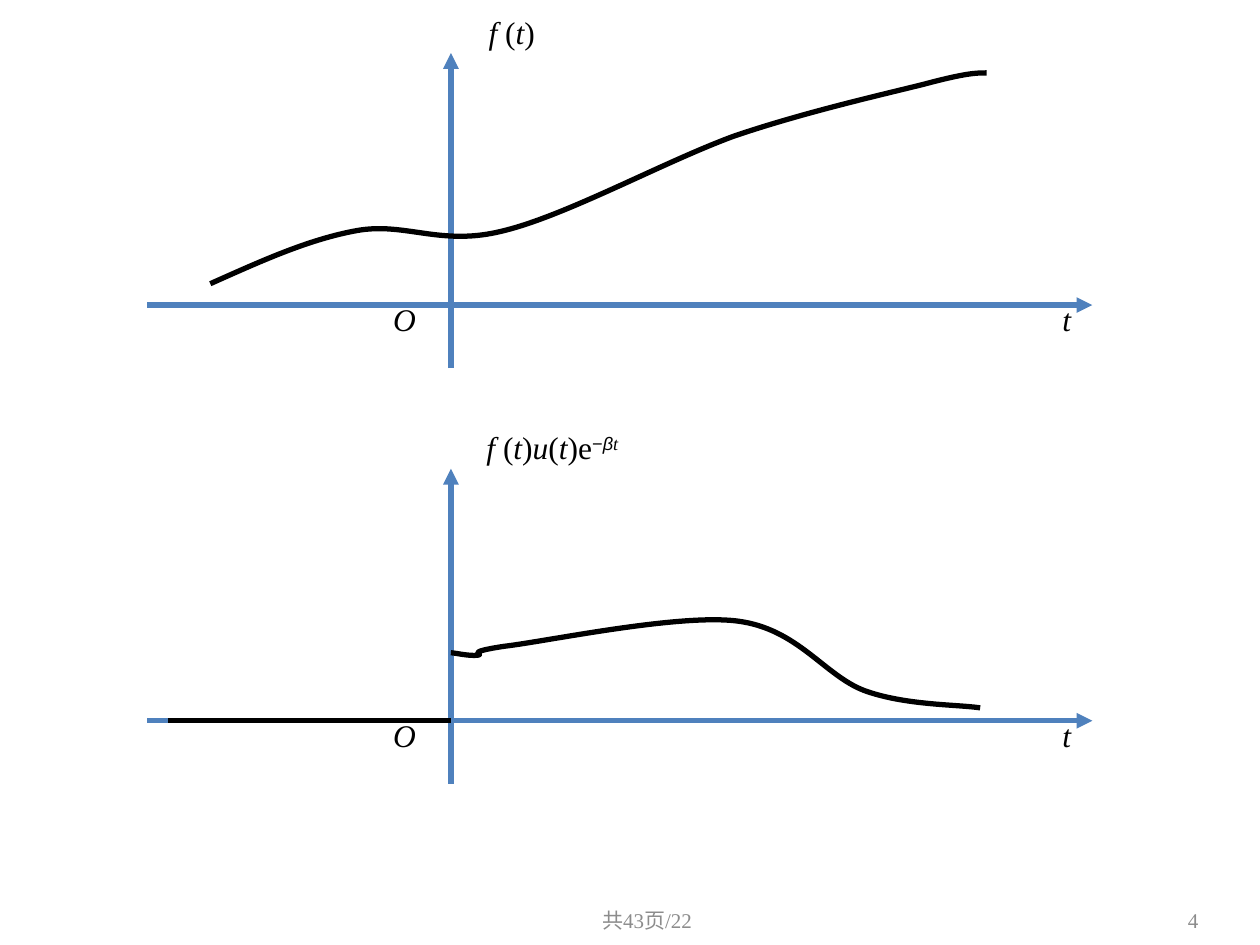
from lxml.etree import SubElement
from pptx import Presentation
from pptx.dml.color import RGBColor
from pptx.enum.shapes import MSO_CONNECTOR
from pptx.enum.text import MSO_ANCHOR, MSO_AUTO_SIZE, PP_ALIGN
from pptx.oxml.ns import qn
from pptx.util import Cm, Pt

BLUE, BLACK, GRAY = "4F81BD", "000000", "8C8C8C"
SERIF, SANS = "Times New Roman", "Arial"

# Runs: text, italic, superscript, font
F_OF_T = [("f ", True, False, SERIF), ("(", False, False, SERIF),
          ("t", True, False, SERIF), (")", False, False, SERIF)]
DAMPED = F_OF_T + [("u", True, False, SERIF), ("(", False, False, SERIF),
                   ("t", True, False, SERIF), (")e", False, False, SERIF),
                   ("−", False, True, SANS), ("β", True, True, SANS),
                   ("t", True, True, SERIF)]

# Curves in cm: a start point, then two controls and an end per segment
SIGNAL = [(4.24, 5.72),
          (5.23, 5.28), (6.2, 4.83), (7.19, 4.65),
          (8.18, 4.47), (8.89, 4.98), (10.16, 4.65),
          (11.43, 4.34), (13.41, 3.25), (14.81, 2.74),
          (16.23, 2.26), (17.78, 1.91), (18.62, 1.7),
          (19.48, 1.47), (19.69, 1.47), (19.89, 1.47)]
DECAY = [(9.09, 13.16),
         (9.17, 13.16), (9.45, 13.23), (9.63, 13.21),
         (9.8, 13.18), (9.3, 13.16), (10.16, 13.03),
         (11.02, 12.93), (13.67, 12.37), (14.86, 12.52),
         (16.08, 12.67), (16.61, 13.61), (17.42, 13.92),
         (18.24, 14.22), (19.28, 14.2), (19.76, 14.27)]

# Plots: height of the time axis, title, title left and width, curve
PLOTS = [(6.15, F_OF_T, 9.58, 1.47, SIGNAL),
         (14.53, DAMPED, 9.47, 3.33, DECAY)]
AXIS_LEFT, AXIS_RIGHT, ORIGIN = 2.97, 22.02, 9.09
ABOVE, BELOW = 5.08, 1.27
AXIS_LABELS = [("t", 21.16, 0.69), ("O", 7.67, 0.97)]
LABEL_HEIGHT = 1.03

# Footer: text, left, width, alignment
FOOTER = [("4", 18.49, 5.92, PP_ALIGN.RIGHT),
          ("共43页/22", 9.02, 8.05, PP_ALIGN.CENTER)]


def color(value):
    return RGBColor.from_string(value)


def add_line(page, x1, y1, x2, y2, ink, arrow=False):
    line = page.shapes.add_connector(
        MSO_CONNECTOR.STRAIGHT, Cm(x1), Cm(y1), Cm(x2), Cm(y2))
    line.line.color.rgb = color(ink)
    line.line.width = Pt(3)
    if arrow:
        SubElement(line.line._get_or_add_ln(), qn("a:tailEnd"), type="triangle")
    SubElement(line._element.spPr, qn("a:effectLst"))


def add_curve(page, points):
    start, *rest = [(Cm(x), Cm(y)) for x, y in points]
    builder = page.shapes.build_freeform(*start)
    builder.add_line_segments(rest, close=False)
    curve = builder.convert_to_shape()
    curve.shadow.inherit = False
    curve.fill.background()
    curve.line.color.rgb = color(BLACK)
    curve.line.width = Pt(3)
    # Join each three straight steps into one cubic segment
    outline = next(curve._element.iter(qn("a:path")))
    steps = outline.findall(qn("a:lnTo"))
    for i in range(0, len(steps), 3):
        cubic = SubElement(outline, qn("a:cubicBezTo"))
        for step in steps[i:i + 3]:
            cubic.append(step[0])
            outline.remove(step)


def add_text(page, left, top, width, height, runs, size, ink, align, label=True):
    box = page.shapes.add_textbox(Cm(left), Cm(top), Cm(width), Cm(height))
    frame = box.text_frame
    frame.word_wrap = not label
    if label:
        frame.auto_size = MSO_AUTO_SIZE.SHAPE_TO_FIT_TEXT
    else:
        frame.vertical_anchor = MSO_ANCHOR.MIDDLE
    para = frame.paragraphs[0]
    para.alignment = align
    for text, italic, raised, face in runs:
        span = para.add_run()
        span.text = text
        font = span.font
        font.name, font.size, font.italic = face, Pt(size), italic
        font.color.rgb = color(ink)
        if raised:
            span._r.get_or_add_rPr().set("baseline", "30000")


def add_label(page, left, top, width, runs):
    add_text(page, left, top, width, LABEL_HEIGHT, runs, 18, BLACK, PP_ALIGN.CENTER)


def main():
    deck = Presentation()
    deck.slide_width, deck.slide_height = Cm(25.4), Cm(19.05)
    page = deck.slides.add_slide(deck.slide_layouts[6])

    # Plots with axes, curve and labels
    for axis, title, left, width, points in PLOTS:
        add_line(page, AXIS_LEFT, axis, AXIS_RIGHT, axis, BLUE, arrow=True)
        add_line(page, ORIGIN, axis + BELOW, ORIGIN, axis - ABOVE, BLUE, arrow=True)
        add_curve(page, points)
        add_label(page, left, axis - 6.02, width, title)
        for text, x, label_width in AXIS_LABELS:
            add_label(page, x, axis - 0.23, label_width, [(text, True, False, SERIF)])

    # Zero signal before the origin
    zero = PLOTS[1][0]
    add_line(page, ORIGIN, zero, 3.39, zero, BLACK)

    # Footer
    for text, left, width, align in FOOTER:
        add_text(page, left, 18.03, width, 1.02, [(text, False, False, SERIF)],
                 12, GRAY, align, label=False)

    deck.save("out.pptx")


if __name__ == "__main__":
    main()
